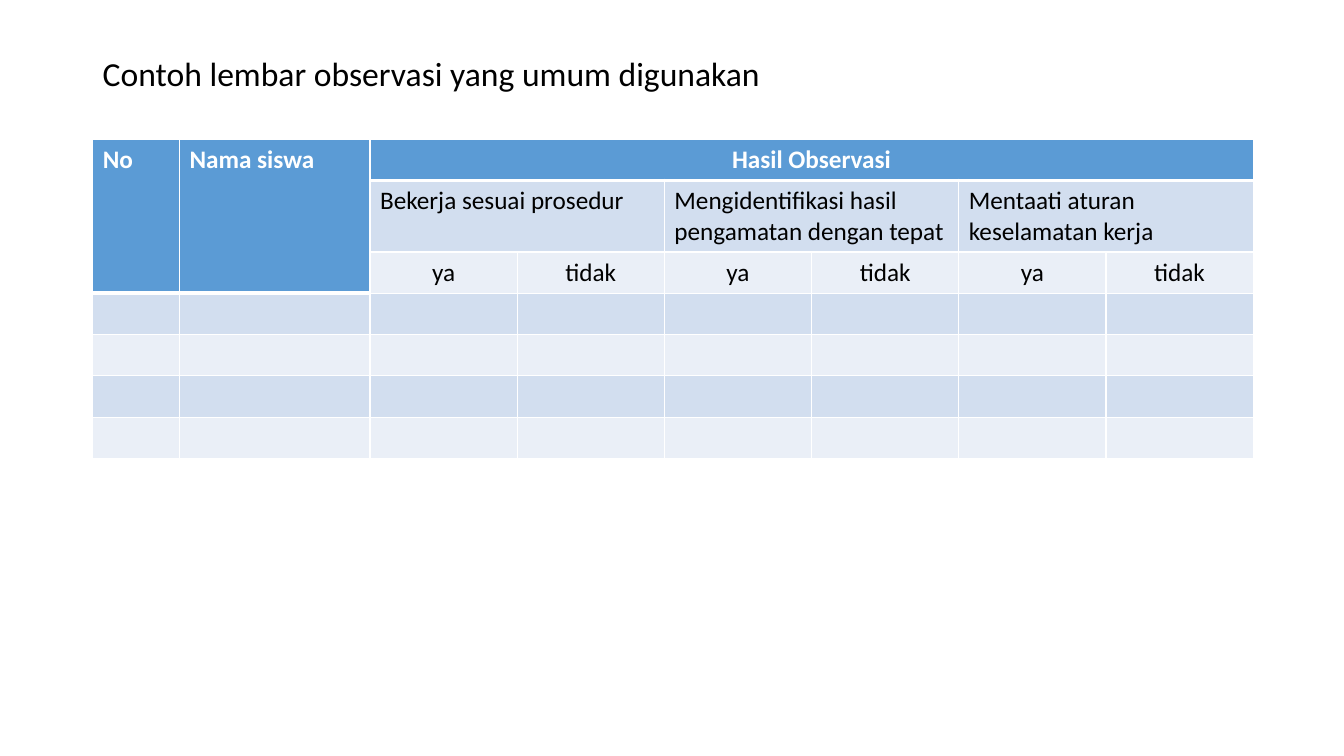
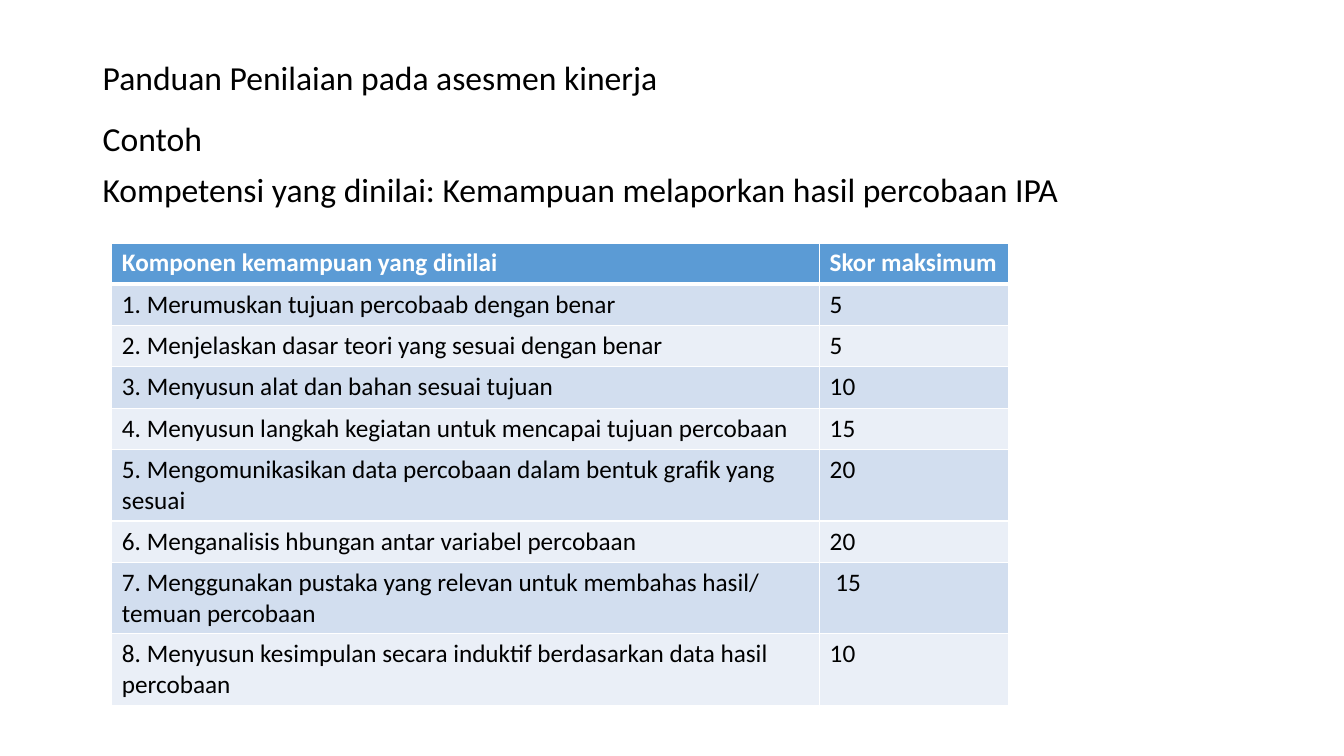
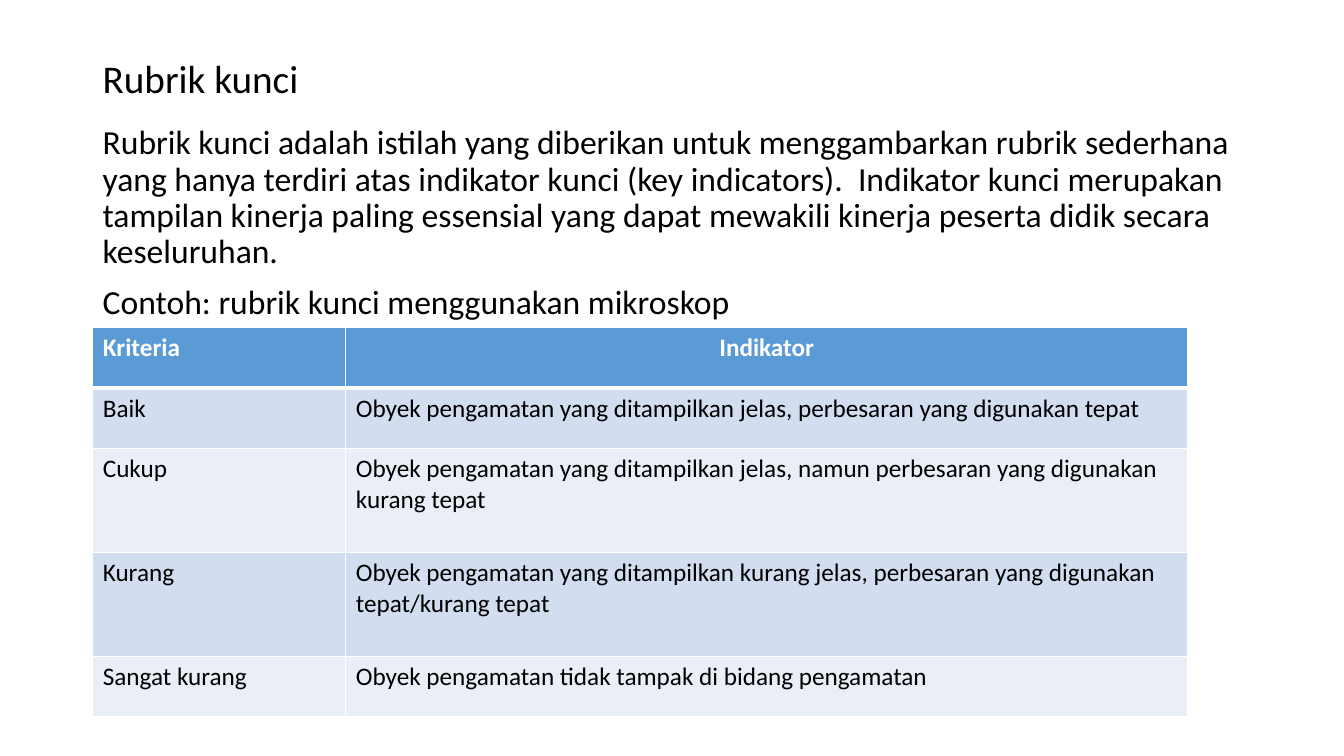
from lxml import etree
from pptx import Presentation
from pptx.dml.color import RGBColor
from pptx.enum.text import MSO_ANCHOR, PP_ALIGN
from pptx.oxml.ns import qn
from pptx.util import Inches, Pt

CENTER = PP_ALIGN.CENTER
MIDDLE = MSO_ANCHOR.MIDDLE
TOP = MSO_ANCHOR.TOP

FONT = "Calibri"
BLACK = RGBColor(0x00, 0x00, 0x00)
WHITE = RGBColor(0xFF, 0xFF, 0xFF)
HEADER_BLUE = RGBColor(0x5B, 0x9B, 0xD5)
BANDS = (RGBColor(0xEA, 0xEF, 0xF7), RGBColor(0xD2, 0xDE, 0xEF))

MARGIN = 0.92
CONTENT_WIDTH = 11.5
TITLE_TOP = 0.4
BODY_BOTTOM = 6.76
ROW = 0.41
TWO_LINE_ROW = 0.71


def format_runs(paragraph, size, color=BLACK, bold=False):
    for run in paragraph.runs:
        run.font.name = FONT
        run.font.size = Pt(size)
        run.font.bold = bold
        run.font.color.rgb = color


def add_text(slide, top, height, paragraphs, size=24, anchor=TOP):
    box = slide.shapes.add_textbox(
        Inches(MARGIN), Inches(top), Inches(CONTENT_WIDTH), Inches(height))
    frame = box.text_frame
    frame.word_wrap = True
    frame.vertical_anchor = anchor
    frame.text = "\n".join(paragraphs)
    for index, paragraph in enumerate(frame.paragraphs):
        paragraph.line_spacing = 0.9
        paragraph.space_before = Pt(10 if index else 0)
        format_runs(paragraph, size)


def add_title(slide, title, height, size=24):
    add_text(slide, TITLE_TOP, height, [title], size, MIDDLE)


def add_body(slide, top, paragraphs):
    add_text(slide, top, BODY_BOTTOM - top, paragraphs)


def set_borders(cell, widths):
    """Draw white borders; widths maps L, R, T, B to points."""
    properties = cell._tc.get_or_add_tcPr()
    for side, width in widths.items():
        line = etree.SubElement(properties, qn(f"a:ln{side}"), w=str(Pt(width)))
        fill = etree.SubElement(line, qn("a:solidFill"))
        etree.SubElement(fill, qn("a:srgbClr"), val=str(WHITE))


def format_cell(cell, row, is_header, is_centered):
    if is_header:
        set_borders(cell, {"L": 1, "R": 1, "T": 1, "B": 3})
    else:
        set_borders(cell, {"L": 1, "R": 1, "B": 1})
    cell.fill.solid()
    cell.fill.fore_color.rgb = HEADER_BLUE if is_header else BANDS[row % 2]
    paragraph = cell.text_frame.paragraphs[0]
    if is_centered:
        paragraph.alignment = CENTER
    format_runs(paragraph, 18, WHITE if is_header else BLACK, is_header)


def add_table(slide, left, top, widths, heights, texts, centered=(), spans=()):
    """Build a banded table; spans lists (row, column, last row, last column)."""
    table = slide.shapes.add_table(
        len(heights), len(widths), Inches(left), Inches(top),
        Inches(sum(widths)), Inches(sum(heights))).table
    for column, width in zip(table.columns, widths):
        column.width = Inches(width)
    for table_row, height in zip(table.rows, heights):
        table_row.height = Inches(height)

    header_cells = {(0, column) for column in range(len(widths))}
    for first_row, first_column, last_row, last_column in spans:
        table.cell(first_row, first_column).merge(table.cell(last_row, last_column))
        if first_row == 0:
            header_cells |= {(row, column)
                             for row in range(first_row, last_row + 1)
                             for column in range(first_column, last_column + 1)}

    for row, row_texts in enumerate(texts):
        for column, text in enumerate(row_texts):
            cell = table.cell(row, column)
            if text:
                cell.text_frame.text = text
            position = (row, column)
            format_cell(cell, row, position in header_cells, position in centered)


def build_observation_sheet(slide):
    add_title(slide, "Contoh lembar observasi yang umum digunakan", 0.7)
    answer_columns = range(2, 8)
    texts = [
        ["No", "Nama siswa", "Hasil Observasi"] + [""] * 5,
        ["", "", "Bekerja sesuai prosedur", "",
         "Mengidentifikasi hasil pengamatan dengan tepat", "",
         "Mentaati aturan keselamatan kerja", ""],
        ["", ""] + ["ya", "tidak"] * 3,
    ] + [[""] * 8] * 4
    add_table(
        slide, MARGIN, 1.38, [0.86, 1.89] + [1.46] * 6,
        [ROW, TWO_LINE_ROW] + [ROW] * 5, texts,
        centered={(0, 2)} | {(2, column) for column in answer_columns},
        spans=[(0, 0, 2, 0), (0, 1, 2, 1), (0, 2, 0, 7)]
        + [(1, column, 1, column + 1) for column in answer_columns[::2]])


def build_scoring_guide(slide):
    add_title(slide, "Panduan Penilaian pada asesmen kinerja", 0.77)
    add_body(slide, 1.17, [
        "Contoh",
        "Kompetensi yang dinilai: Kemampuan melaporkan hasil percobaan IPA"])
    texts = [
        ("Komponen kemampuan yang dinilai", "Skor maksimum"),
        ("1. Merumuskan tujuan percobaab dengan benar", "5"),
        ("2. Menjelaskan dasar teori yang sesuai dengan benar", "5"),
        ("3. Menyusun alat dan bahan sesuai tujuan", "10"),
        ("4. Menyusun langkah kegiatan untuk mencapai tujuan percobaan", "15"),
        ("5. Mengomunikasikan data percobaan dalam bentuk grafik yang sesuai", "20"),
        ("6. Menganalisis hbungan antar variabel percobaan", "20"),
        ("7. Menggunakan pustaka yang relevan untuk membahas hasil/ temuan percobaan",
         " 15"),
        ("8. Menyusun kesimpulan secara induktif berdasarkan data hasil percobaan",
         "10"),
    ]
    heights = [ROW] * 5 + [TWO_LINE_ROW, ROW, TWO_LINE_ROW, TWO_LINE_ROW]
    add_table(slide, 1.11, 2.41, [7.02, 1.87], heights, texts)


def build_key_rubric(slide):
    add_title(slide, "Rubrik kunci", 0.8, 28)
    add_body(slide, 1.2, [
        "Rubrik kunci adalah istilah yang diberikan untuk menggambarkan rubrik "
        "sederhana yang hanya terdiri atas indikator kunci (key indicators).  "
        "Indikator kunci merupakan tampilan kinerja paling essensial yang dapat "
        "mewakili kinerja peserta didik secara keseluruhan.",
        "Contoh: rubrik kunci menggunakan mikroskop"])
    texts = [
        ("Kriteria", "Indikator"),
        ("Baik", "Obyek pengamatan yang ditampilkan jelas, "
                 "perbesaran yang digunakan tepat"),
        ("Cukup", "Obyek pengamatan yang ditampilkan jelas, "
                  "namun perbesaran yang digunakan kurang tepat"),
        ("Kurang", "Obyek pengamatan yang ditampilkan kurang jelas, "
                   "perbesaran yang digunakan tepat/kurang tepat"),
        ("Sangat kurang", "Obyek pengamatan tidak tampak di bidang pengamatan"),
    ]
    add_table(slide, MARGIN, 3.25, [2.51, 8.35], [0.6, 0.6, 1.03, 1.03, 0.6],
              texts, centered={(0, 1)})


def main():
    presentation = Presentation()
    presentation.slide_width = Inches(13.33)
    presentation.slide_height = Inches(7.5)
    blank_layout = presentation.slide_layouts[6]
    for build in (build_observation_sheet, build_scoring_guide, build_key_rubric):
        build(presentation.slides.add_slide(blank_layout))
    presentation.save("out.pptx")


if __name__ == "__main__":
    main()
